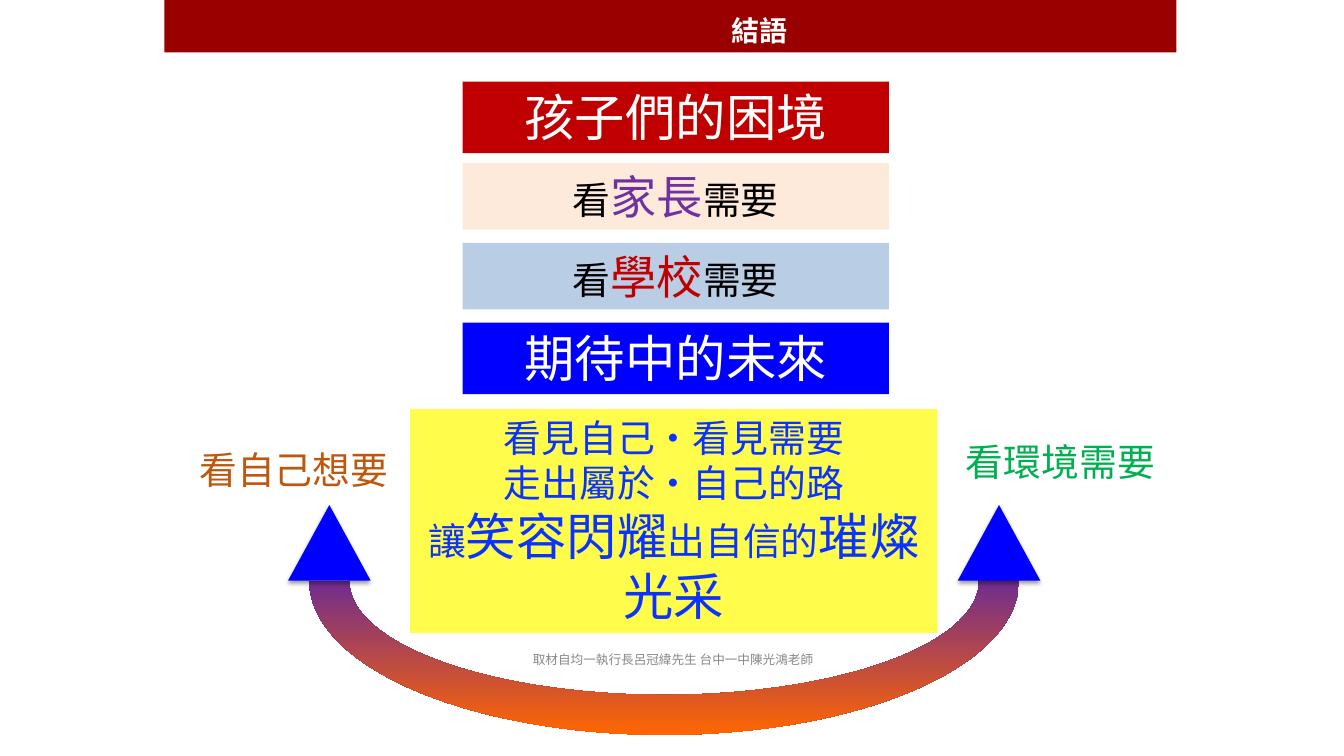
"""Build the closing slide: stacked banners between two upward arrow tips."""
from lxml.etree import SubElement
from pptx import Presentation
from pptx.dml.color import RGBColor
from pptx.enum.shapes import MSO_SHAPE as Preset
from pptx.enum.text import MSO_ANCHOR as Anchor, PP_ALIGN as Align
from pptx.oxml.ns import qn
from pptx.util import Pt

FONT = "Noto Sans CJK SC"
BANNER_LEFT, BANNER_WIDTH = 330.5, 304.5
BANNERS = [
    (116.6, 47.5, "FDEADA", [("看", 27, "000000"), ("家長", 33, "7030A0"), ("需要", 27, "000000")]),
    (173.5, 47.5, "B9CDE5", [("看", 27, "000000"), ("學校", 33, "C00000"), ("需要", 27, "000000")]),
    (58.3, 51.1, "C00000", [("孩子們的困境", 36, "FFFFFF")]),
    (230.4, 51.1, "0000FF", [("期待中的未來", 36, "FFFFFF")]),
]
SIDES = [
    ((127.4, 315.4, 164.9, 40), [("看自己想要", 27, "BD580E")]),
    ((679.7, 309.6, 155.5, 40), [("看環境需要", 27, "00B050")]),
]
MESSAGE_BOX = (293, 292.3, 376.6, 159.8)
MESSAGE = [
    ("看見自己・看見需要\n走出屬於・自己的路\n讓", 27, "0A33FF"),
    ("笑容閃耀", 36, "0A33FF"),
    ("出自信的", 27, "0A33FF"),
    ("璀燦光采", 36, "0A33FF"),
]
CREDIT_BOX = (349.2, 457.9, 262.8, 26.6)
CREDIT = [("取材自均一執行長呂冠緯先生 台中一中陳光鴻老師", 9, "888888")]
HEADER_BOX = (117.4, 0, 722.9, 37.4)
TITLE_BOX = (515.5, 5.8, 54.7, 31.7)
TITLE = [("結語", 20, "FFFFFF")]
ARC_BOX = (221, 305.3, 506.9, 219.6)
ARC_ADJUST = (215.78, 108, 0.13)
ARC_STOPS = [(0.11, "0000FF"), (1, "FF6600")]
TIP_TOP, TIP_WIDTH, TIP_HEIGHT, TIP_FILL = 360.7, 59, 54, "0000FF"
TIP_SHADOW = {"blurRad": Pt(3.1), "dist": Pt(1.6), "dir": 90 * 60000, "rotWithShape": 0}


def color(value):
    return RGBColor.from_string(value)


def write(shape, runs, align=Align.CENTER, bold=False, **frame_format):
    frame = shape.text_frame
    for name, value in {"word_wrap": True, "vertical_anchor": Anchor.TOP, **frame_format}.items():
        setattr(frame, name, value)
    paragraph = frame.paragraphs[0]
    paragraph.alignment = align
    for words, size, ink in runs:
        for index, line in enumerate(words.split("\n")):
            if index:
                paragraph.add_line_break()
            run = paragraph.add_run()
            run.text = line
            for name, value in {"name": FONT, "size": Pt(size), "bold": bold}.items():
                setattr(run.font, name, value)
            run.font.color.rgb = color(ink)
            SubElement(run.font._element, qn("a:ea"), typeface=FONT)


def add_shape(slide, preset, box, fill=None):
    shape = slide.shapes.add_shape(preset, *map(Pt, box))
    shape.shadow.inherit = False
    shape.line.fill.background()
    if fill:
        shape.fill.solid()
        shape.fill.fore_color.rgb = color(fill)
    return shape


def add_label(slide, box, runs, **text_format):
    write(slide.shapes.add_textbox(*map(Pt, box)), runs, **text_format)


def add_arc(slide):
    arc = add_shape(slide, Preset.BLOCK_ARC, ARC_BOX)
    for index, value in enumerate(ARC_ADJUST):
        arc.adjustments[index] = value
    arc.fill.gradient()
    arc.fill.gradient_angle = 270
    for stop, (position, tint) in zip(arc.fill.gradient_stops, ARC_STOPS):
        stop.position = position
        stop.color.rgb = color(tint)


def add_tips(slide):
    left, _, width, height = ARC_BOX
    band = ARC_ADJUST[2] * min(width, height)
    for center in (left + width - band / 2, left + band / 2):
        tip = add_shape(slide, Preset.ISOSCELES_TRIANGLE,
                        (center - TIP_WIDTH / 2, TIP_TOP, TIP_WIDTH, TIP_HEIGHT), TIP_FILL)
        effects = tip._element.spPr.find(qn("a:effectLst"))
        shadow = SubElement(effects, qn("a:outerShdw"))
        for name, value in TIP_SHADOW.items():
            shadow.set(name, str(value))
        SubElement(SubElement(shadow, qn("a:srgbClr"), val="000000"), qn("a:alpha"), val="38000")


def main():
    deck = Presentation()
    deck.slide_width, deck.slide_height = Pt(960), Pt(540)
    slide = deck.slides.add_slide(deck.slide_layouts[6])
    for top, height, fill, runs in BANNERS:
        write(add_shape(slide, Preset.RECTANGLE, (BANNER_LEFT, top, BANNER_WIDTH, height), fill), runs)
    for box, runs in SIDES:
        add_label(slide, box, runs)
    message = add_shape(slide, Preset.RECTANGLE, MESSAGE_BOX, "FFFC00")
    SubElement(message._element.spPr.find(".//" + qn("a:srgbClr")), qn("a:alpha"), val="70000")
    write(message, MESSAGE)
    add_label(slide, CREDIT_BOX, CREDIT, vertical_anchor=Anchor.MIDDLE,
              margin_left=Pt(5), margin_right=Pt(5), margin_top=Pt(3), margin_bottom=Pt(3))
    add_arc(slide)
    add_tips(slide)
    add_shape(slide, Preset.RECTANGLE, HEADER_BOX, "990000")
    add_label(slide, TITLE_BOX, TITLE, align=Align.LEFT, bold=True, word_wrap=False)
    deck.save("out.pptx")


if __name__ == "__main__":
    main()
